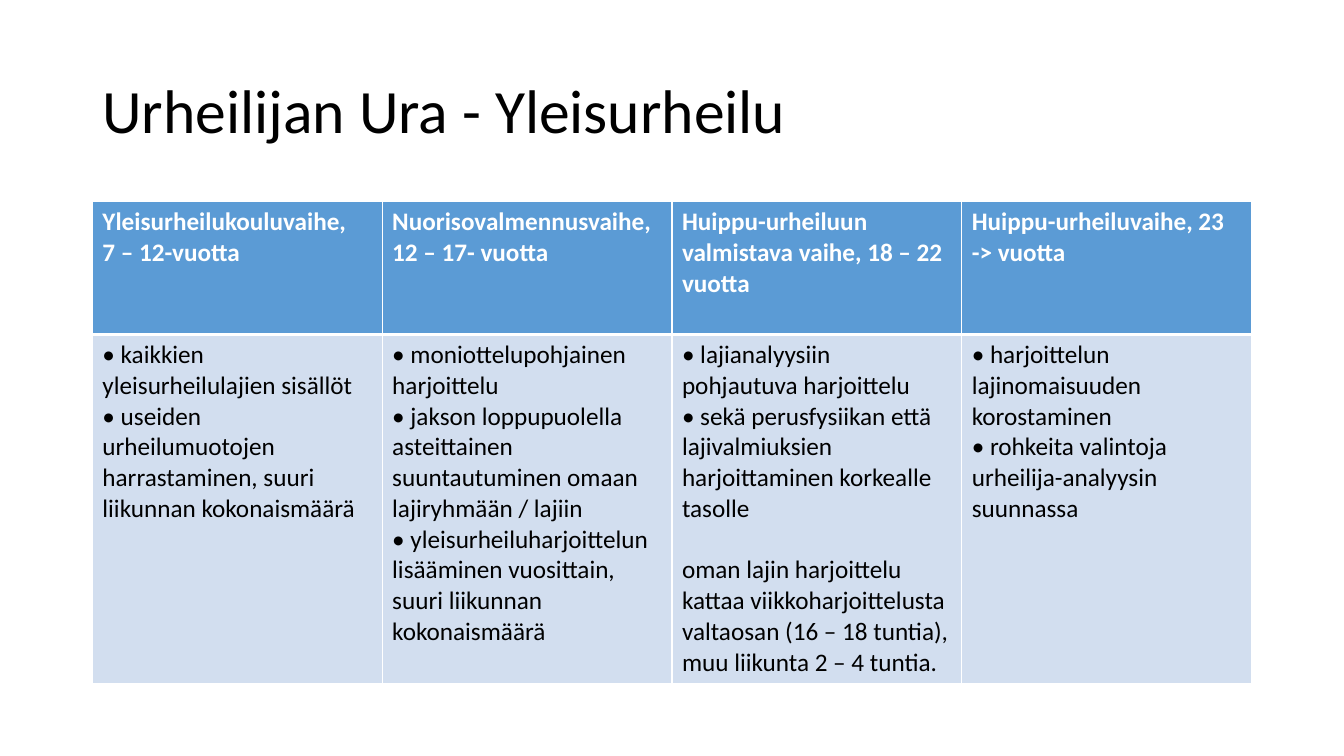
from dataclasses import dataclass

from lxml import etree
from pptx import Presentation
from pptx.dml.color import RGBColor
from pptx.enum.text import MSO_ANCHOR, MSO_AUTO_SIZE, PP_ALIGN
from pptx.oxml.ns import qn
from pptx.util import Pt

LEFT = PP_ALIGN.LEFT
MIDDLE = MSO_ANCHOR.MIDDLE
NO_AUTOFIT = MSO_AUTO_SIZE.NONE
TITLE_ONLY = 5


@dataclass(frozen=True)
class Theme:
    font: str = "Calibri"
    title_size: int = 44
    table_size: int = 18
    ink: str = "000000"
    white: str = "FFFFFF"
    header_fill: str = "5B9BD5"
    body_fill: str = "D2DEEF"
    thin_rule: int = 1
    header_rule: int = 3


HEADING = "Urheilijan Ura - Yleisurheilu"
BLANK_LINE = 22  # height of one line of table text

# Each phase: header lines, bulleted lines, closing remark
PHASES = [
    (
        ["Yleisurheilukouluvaihe,", "7 – 12-vuotta"],
        ["kaikkien yleisurheilulajien sisällöt",
         "useiden urheilumuotojen harrastaminen, suuri liikunnan kokonaismäärä"],
        None,
    ),
    (
        ["Nuorisovalmennusvaihe, 12 – 17- vuotta"],
        ["moniottelupohjainen harjoittelu",
         "jakson loppupuolella asteittainen suuntautuminen omaan lajiryhmään / lajiin",
         "yleisurheiluharjoittelun lisääminen vuosittain, suuri liikunnan kokonaismäärä"],
        None,
    ),
    (
        ["Huippu-urheiluun valmistava vaihe, 18 – 22 vuotta"],
        ["lajianalyysiin pohjautuva harjoittelu",
         "sekä perusfysiikan että lajivalmiuksien harjoittaminen korkealle tasolle"],
        "oman lajin harjoittelu kattaa viikkoharjoittelusta valtaosan "
        "(16 – 18 tuntia), muu liikunta 2 – 4 tuntia.",
    ),
    (
        ["Huippu-urheiluvaihe, 23 -> vuotta"],
        ["harjoittelun lajinomaisuuden korostaminen",
         "rohkeita valintoja urheilija-analyysin suunnassa"],
        None,
    ),
]


def write(paragraph, text, *, font, size, color, bold=False, line_spacing=None, before=None):
    paragraph.alignment = LEFT
    paragraph.line_spacing = line_spacing
    if before is not None:
        paragraph.space_before = Pt(before)
    run = paragraph.add_run()
    run.text = text
    run.font.name = font
    run.font.size = Pt(size)
    run.font.bold = bold
    run.font.color.rgb = RGBColor.from_string(color)


def set_borders(cell, color, **widths):
    """Draw the cell's edges; widths are keyed by L, R, T and B in that order."""
    properties = cell._tc.get_or_add_tcPr()
    for side, width in widths.items():
        edge = etree.SubElement(properties, qn(f"a:ln{side}"), w=str(Pt(width)))
        fill = etree.SubElement(edge, qn("a:solidFill"))
        etree.SubElement(fill, qn("a:srgbClr"), val=color)


class SlideBuilder:
    def __init__(self, slide, theme):
        self.slide = slide
        self.theme = theme

    def title(self, text, left, top, width, height):
        title = self.slide.shapes.title
        title.left, title.top = Pt(left), Pt(top)
        title.width, title.height = Pt(width), Pt(height)
        frame = title.text_frame
        frame.auto_size = NO_AUTOFIT
        frame.vertical_anchor = MIDDLE
        write(frame.paragraphs[0], text, font=self.theme.font,
              size=self.theme.title_size, color=self.theme.ink, line_spacing=0.9)

    def cell(self, cell, lines, *, fill, color, top_rule, bottom_rule, bold=False):
        """Fill one cell; lines are pairs of text and space before."""
        theme = self.theme
        set_borders(cell, theme.white, L=theme.thin_rule, R=theme.thin_rule,
                    T=top_rule, B=bottom_rule)
        cell.fill.solid()
        cell.fill.fore_color.rgb = RGBColor.from_string(fill)
        frame = cell.text_frame
        for index, (text, before) in enumerate(lines):
            paragraph = frame.add_paragraph() if index else frame.paragraphs[0]
            write(paragraph, text, font=theme.font, size=theme.table_size,
                  color=color, bold=bold, before=before)

    def phase_table(self, phases, left, top, width, row_heights):
        theme = self.theme
        table = self.slide.shapes.add_table(
            len(row_heights), len(phases), Pt(left), Pt(top), Pt(width), Pt(sum(row_heights))
        ).table
        for row, height in zip(table.rows, row_heights):
            row.height = Pt(height)
        for column, (header, bullets, remark) in enumerate(phases):
            self.cell(table.cell(0, column), [(line, None) for line in header],
                      fill=theme.header_fill, color=theme.white, bold=True,
                      top_rule=theme.thin_rule, bottom_rule=theme.header_rule)
            body = [(f"• {line}", None) for line in bullets]
            if remark:
                body.append((remark, BLANK_LINE))
            self.cell(table.cell(1, column), body,
                      fill=theme.body_fill, color=theme.ink,
                      top_rule=theme.header_rule, bottom_rule=theme.thin_rule)


def main():
    deck = Presentation()
    deck.slide_width, deck.slide_height = Pt(960), Pt(540)
    slide = deck.slides.add_slide(deck.slide_layouts[TITLE_ONLY])
    builder = SlideBuilder(slide, Theme())
    builder.title(HEADING, 66, 28.75, 828, 104.4)
    builder.phase_table(PHASES, 66, 144, 828, [95, 249])
    deck.save("out.pptx")


if __name__ == "__main__":
    main()
